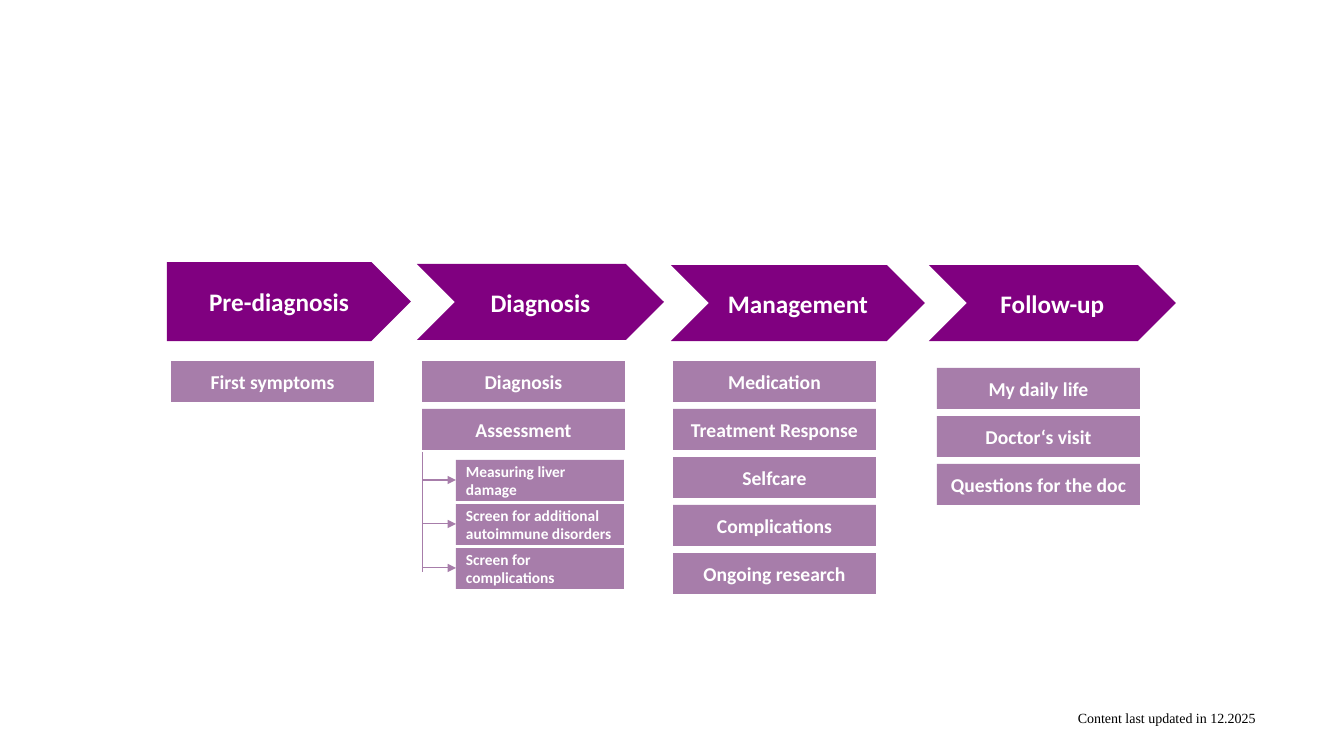
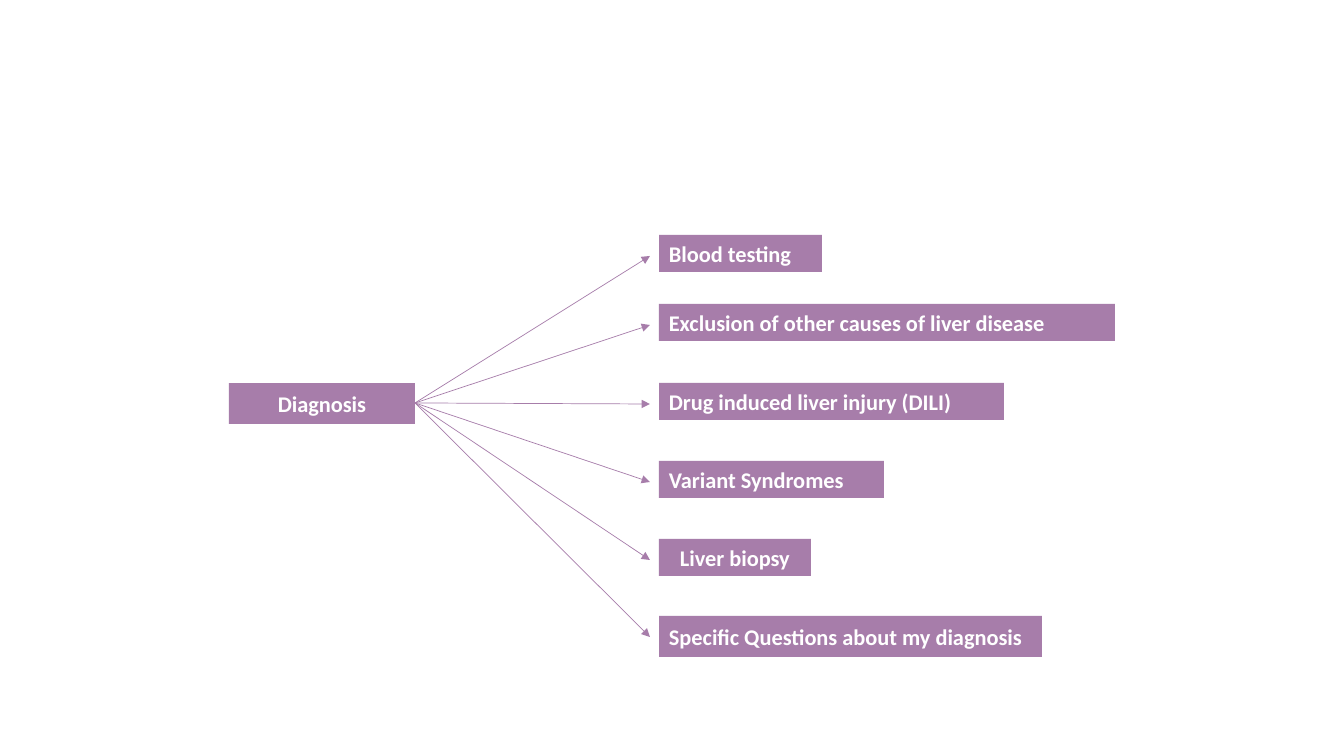
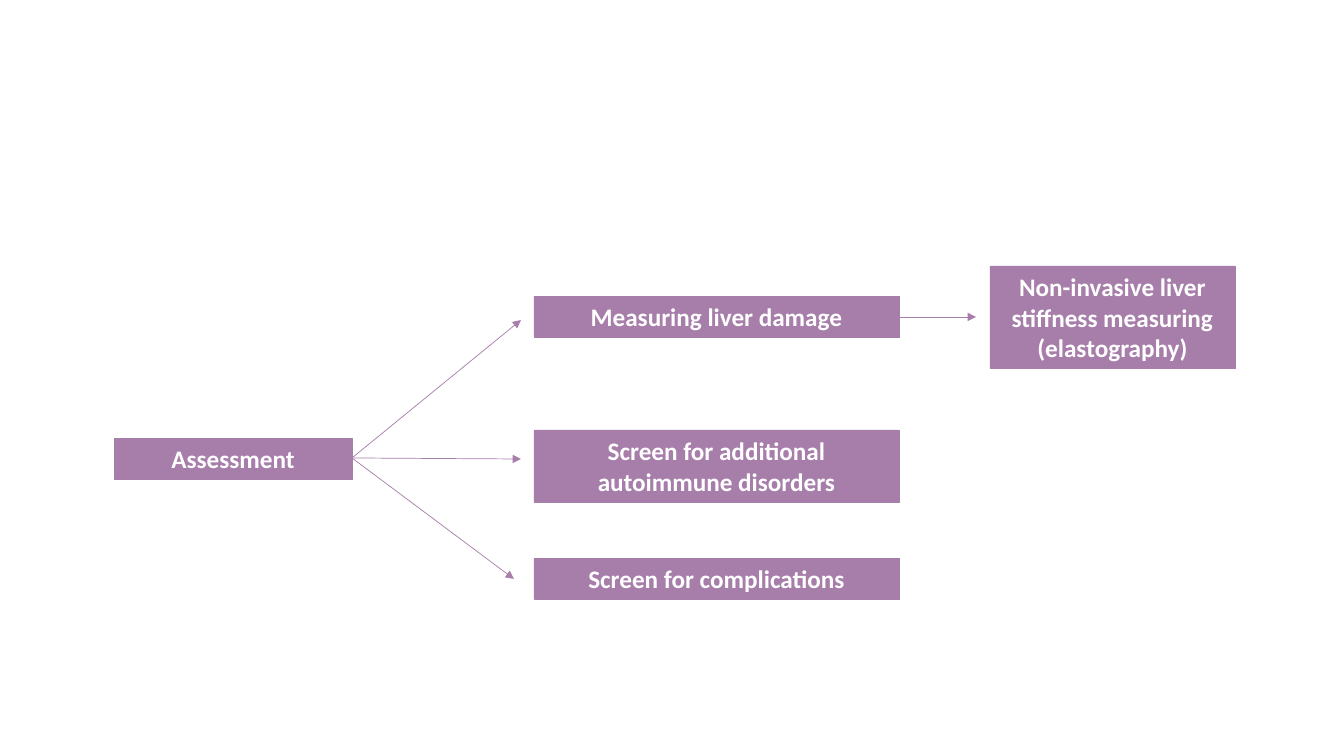
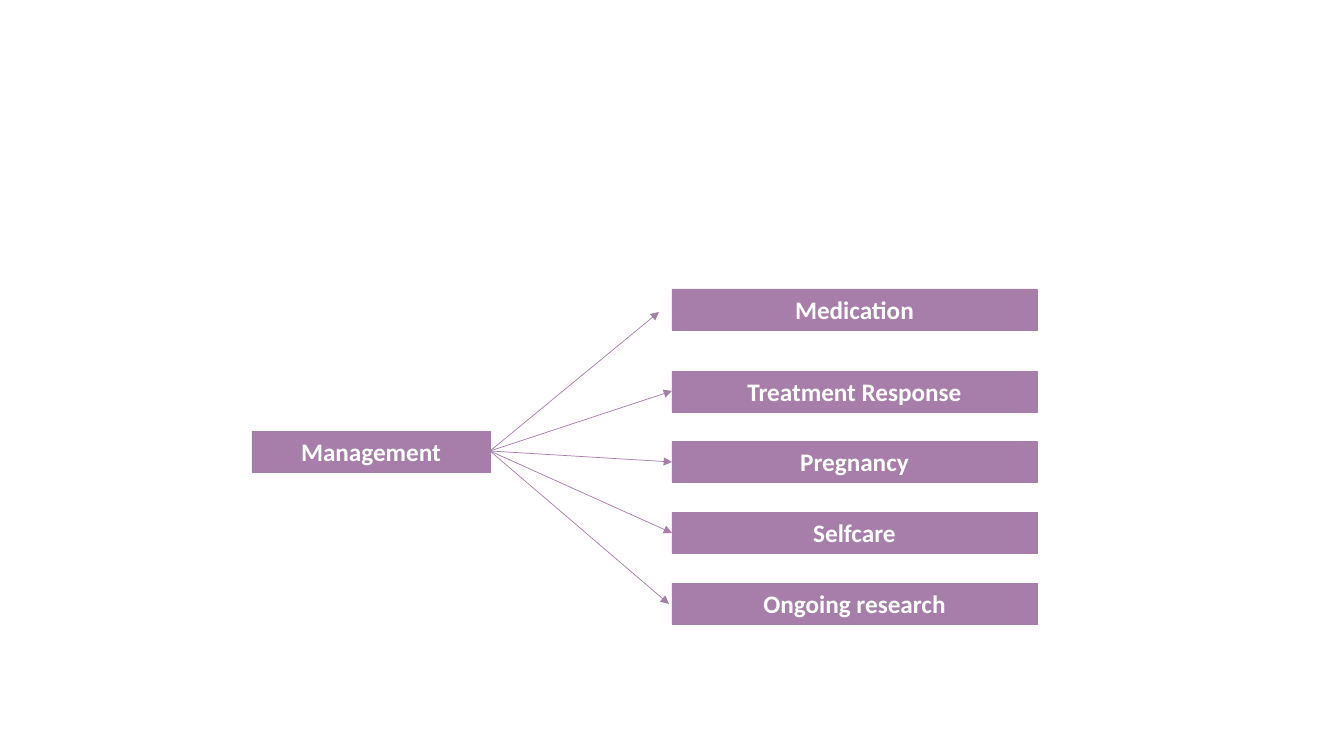
from lxml import etree
from pptx import Presentation, util as u
from pptx.dml.color import RGBColor
from pptx.enum import shapes, text
from pptx.oxml.ns import qn

PX = 914400 / 100.8
PURPLE, LILAC, WHITE, BLACK = "800080", "A77DAA", "FFFFFF", "000000"
RECT = shapes.MSO_SHAPE.RECTANGLE
PLATE = shapes.MSO_SHAPE.PENTAGON
CHEVRON = shapes.MSO_SHAPE.CHEVRON
LEFT, CENTER = text.PP_ALIGN.LEFT, text.PP_ALIGN.CENTER
rgb = RGBColor.from_string


def box(slide, rect, label, size, align=CENTER, kind=RECT, fill=LILAC, edge=False):
    """Add a filled shape with bold white text; rect is left, top, width, height in px."""
    shape = slide.shapes.add_shape(kind, *[round(n * PX) for n in rect])
    shape.shadow.inherit = False
    shape.fill.solid()
    shape.fill.fore_color.rgb = rgb(fill)
    if edge:
        shape.line.color.rgb = rgb(fill)
        shape.line.width = u.Pt(0.5)
    else:
        shape.line.fill.background()
    frame = shape.text_frame
    frame.word_wrap = True
    frame.vertical_anchor = text.MSO_ANCHOR.MIDDLE
    para = frame.paragraphs[0]
    para.text = label
    para.alignment = align
    font = para.font
    font.name, font.size, font.bold = "Calibri", u.Pt(size), True
    font.color.rgb = rgb(WHITE)


def link(slide, start, end, width=0.5, arrow=True):
    """Join two px points with a straight line."""
    ends = [round(n * PX) for n in (*start, *end)]
    line = slide.shapes.add_connector(shapes.MSO_CONNECTOR.STRAIGHT, *ends)
    line.line.color.rgb = rgb(LILAC)
    line.line.width = u.Pt(width)
    if arrow:
        etree.SubElement(line.line._get_or_add_ln(), qn("a:tailEnd"), type="triangle")
    etree.SubElement(line._element.spPr, qn("a:effectLst"))


deck = Presentation()
deck.slide_width, deck.slide_height = round(1344 * PX), round(756 * PX)
blank = deck.slide_layouts[6]

# Patient journey
slide = deck.slides.add_slide(blank)
stages = [
    ("Pre-diagnosis", PLATE, (167, 262, 244, 79), 171, 361, ["First symptoms"]),
    ("Diagnosis", CHEVRON, (417, 264, 247, 76), 422, 361, ["Diagnosis", "Assessment"]),
    ("Management", CHEVRON, (671, 265, 254, 76), 673, 361,
     ["Medication", "Treatment Response", "Selfcare", "Complications", "Ongoing research"]),
    ("Follow-up", CHEVRON, (929, 265, 247, 76), 937, 368,
     ["My daily life", "Doctor‘s visit", "Questions for the doc"]),
]
for stage, kind, rect, left, top, topics in stages:
    box(slide, rect, stage, 18, kind=kind, fill=PURPLE)
    for row, topic in enumerate(topics):
        box(slide, (left, top + 48 * row, 203, 41), topic, 14)

checks = ["Measuring liver damage", "Screen for additional autoimmune disorders",
          "Screen for complications"]
link(slide, (423, 452), (423, 572), 0.75, arrow=False)
for row, check in enumerate(checks):
    top = 460 + 44 * row
    box(slide, (456, top, 168, 41), check, 11, LEFT)
    link(slide, (423, top + 20), (456, top + 20), 0.75)

note = slide.shapes.add_textbox(*[round(n * PX) for n in (1068, 705, 217, 27)])
note.text_frame.word_wrap = True
para = note.text_frame.paragraphs[0]
para.text = "Content last updated in 12.2025"
para.font.name, para.font.size = "Times New Roman", u.Pt(10)
para.font.color.rgb = rgb(BLACK)

# Diagnosis
slide = deck.slides.add_slide(blank)
box(slide, (229, 383, 186, 41), "Diagnosis", 16)
tests = [
    ("Blood testing", 235, 163, 37, LEFT),
    ("Exclusion of other causes of liver disease", 304, 456, 37, LEFT),
    ("Drug induced liver injury (DILI)", 383, 345, 37, LEFT),
    ("Variant Syndromes", 461, 225, 37, LEFT),
    ("Liver biopsy", 539, 152, 37, CENTER),
    ("Specific Questions about my diagnosis", 616, 383, 41, LEFT),
]
for test, top, width, height, align in tests:
    box(slide, (659, top, width, height), test, 16, align)
    link(slide, (415, 403), (650, top + 21))

# Assessment and management
trees = [
    ("Assessment", 114, 438, 534, [
        ("Measuring liver damage", 296, 41, (521, 320)),
        ("Screen for additional autoimmune disorders", 430, 72, (521, 459)),
        ("Screen for complications", 558, 41, (514, 579)),
    ]),
    ("Management", 252, 431, 672, [
        ("Medication", 289, 41, (659, 312)),
        ("Treatment Response", 371, 41, (672, 391)),
        ("Pregnancy", 441, 41, (672, 462)),
        ("Selfcare", 512, 41, (672, 533)),
        ("Ongoing research", 583, 41, (669, 604)),
    ]),
]
for root, left, top, column, leaves in trees:
    slide = deck.slides.add_slide(blank)
    box(slide, (left, top, 238, 41), root, 18, edge=True)
    for leaf, y, height, tip in leaves:
        box(slide, (column, y, 365, height), leaf, 18, edge=True)
        link(slide, (left + 238, top + 20), tip)
    if root == "Assessment":
        box(slide, (990, 266, 245, 102),
            "Non-invasive liver stiffness measuring (elastography)", 18, edge=True)
        link(slide, (899, 317), (976, 317))

deck.save("out.pptx")
